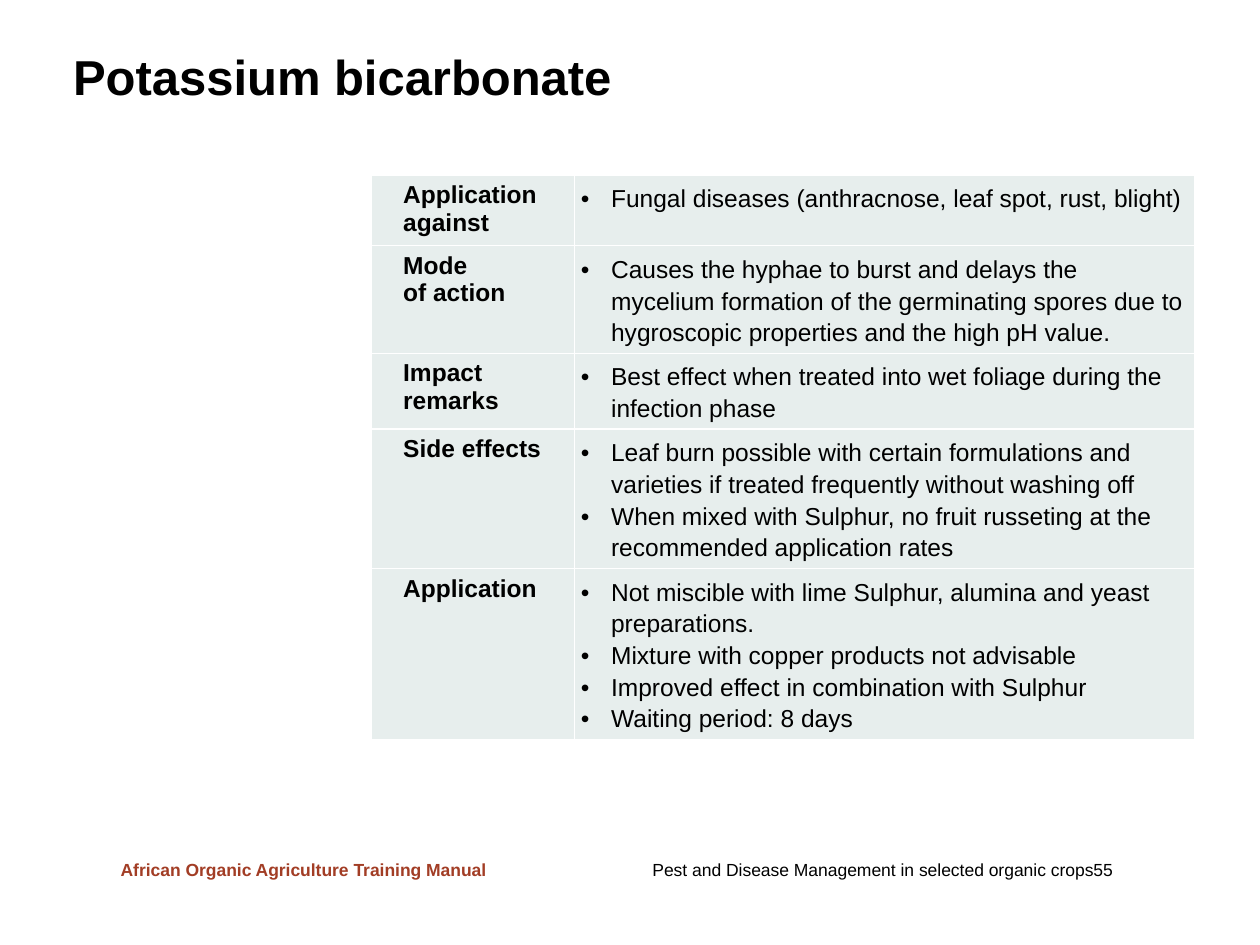
"""Build the slide on potassium bicarbonate with its table of properties."""
from copy import deepcopy

from lxml import etree
from pptx import Presentation
from pptx.dml.color import RGBColor
from pptx.enum.text import MSO_ANCHOR, PP_ALIGN
from pptx.oxml.ns import qn
from pptx.util import Inches, Pt

LEFT = PP_ALIGN.LEFT
MIDDLE = MSO_ANCHOR.MIDDLE
FONT = "Arial"
COLORS = {"ink": "000000", "brand": "A23D25", "cell": "E7EEED", "line": "FFFFFF"}

TITLE = "Potassium bicarbonate"
MANUAL = "African Organic Agriculture Training Manual"
TOPIC = "Pest and Disease Management in selected organic crops\t55"
COLS = (1.61, 4.92)
ROWS = [
    ("Application against", 0.56, [
        "Fungal diseases (anthracnose, leaf spot, rust, blight)"]),
    ("Mode\vof action", 0.85, [
        "Causes the hyphae to burst and delays the mycelium formation of the "
        "germinating spores due to hygroscopic properties and the high pH value."]),
    ("Impact remarks", 0.6, [
        "Best effect when treated into wet foliage during the infection phase"]),
    ("Side effects", 1.1, [
        "Leaf burn possible with certain formulations and varieties if treated "
        "frequently without washing off",
        "When mixed with Sulphur, no fruit russeting at the recommended "
        "application rates"]),
    ("Application", 1.35, [
        "Not miscible with lime Sulphur, alumina and yeast preparations.",
        "Mixture with copper products not advisable",
        "Improved effect in combination with Sulphur",
        "Waiting period: 8 days"]),
]


def write(frame, lines, size=14, bold=False, color="ink", indent=0, hang=0,
          space=None, after=0, bullet=None, tab=None):
    """Fill a text frame with one paragraph for each line."""
    for i, line in enumerate(lines):
        par = frame.add_paragraph() if i else frame.paragraphs[0]
        par.text = line
        par.alignment = LEFT
        par.space_before, par.space_after = Pt(0), Pt(after)
        if space:
            par.line_spacing = space
        props = par._p.get_or_add_pPr()
        props.set("marL", str(Inches(indent)))
        props.set("indent", str(Inches(-hang)))
        if bullet:
            etree.SubElement(props, qn("a:buFont"), typeface=FONT)
            etree.SubElement(props, qn("a:buChar"), char=bullet)
        if tab:
            stops = etree.SubElement(props, qn("a:tabLst"))
            etree.SubElement(stops, qn("a:tab"), pos=str(Inches(tab)), algn="r")
        for run in par.runs:
            font = run.font
            font.name, font.size, font.bold = FONT, Pt(size), bold
            font.color.rgb = RGBColor.from_string(COLORS[color])
        for gap in par._p.findall(qn("a:br")):
            gap.append(deepcopy(par.runs[0]._r.rPr))


def style(cell):
    """Set the margins, borders and fill of a table cell."""
    cell.margin_left = cell.margin_right = Inches(0.05)
    cell.margin_top = cell.margin_bottom = Inches(0.05)
    props = cell._tc.get_or_add_tcPr()
    for side in "LRTB":
        edge = etree.SubElement(props, qn(f"a:ln{side}"), w=str(Pt(1)))
        fill = etree.SubElement(edge, qn("a:solidFill"))
        etree.SubElement(fill, qn("a:srgbClr"), val=COLORS["line"])
    cell.fill.solid()
    cell.fill.fore_color.rgb = RGBColor.from_string(COLORS["cell"])


def place(shape, *box):
    """Move and size a shape in inches."""
    shape.left, shape.top, shape.width, shape.height = map(Inches, box)


def main():
    """Build and save the slide."""
    deck = Presentation()
    deck.slide_width, deck.slide_height = Inches(10), Inches(7.5)
    slide = deck.slides.add_slide(deck.slide_layouts[5])

    title = slide.shapes.title
    place(title, 0.58, 0.25, 9.02, 0.76)
    frame = title.text_frame
    frame.margin_left = frame.margin_top = 0
    frame.vertical_anchor = MIDDLE
    write(frame, [TITLE], size=28, bold=True)

    high = sum(row[1] for row in ROWS)
    area = [Inches(n) for n in (2.95, 1.39, sum(COLS), high)]
    table = slide.shapes.add_table(len(ROWS), len(COLS), *area).table
    table.first_row = table.horz_banding = False
    for col, width in zip(table.columns, COLS):
        col.width = Inches(width)
    for i, (label, height, facts) in enumerate(ROWS):
        table.rows[i].height = Inches(height)
        head, body = table.cell(i, 0), table.cell(i, 1)
        style(head)
        style(body)
        write(head.text_frame, [label], bold=True, indent=0.2, after=3)
        write(body.text_frame, facts, indent=0.24, hang=0.24, space=1.15, bullet="•")

    for text, left, width, form in (
            (MANUAL, 0.86, 3.14, {"bold": True, "color": "brand"}),
            (TOPIC, 5.08, 4.84, {"tab": 4.27})):
        foot = slide.shapes.add_textbox(*map(Inches, (left, 6.77, width, 0.27)))
        foot.text_frame.word_wrap = "tab" in form
        foot.text_frame.vertical_anchor = MIDDLE
        write(foot.text_frame, [text], size=10, **form)

    deck.save("out.pptx")


if __name__ == "__main__":
    main()
